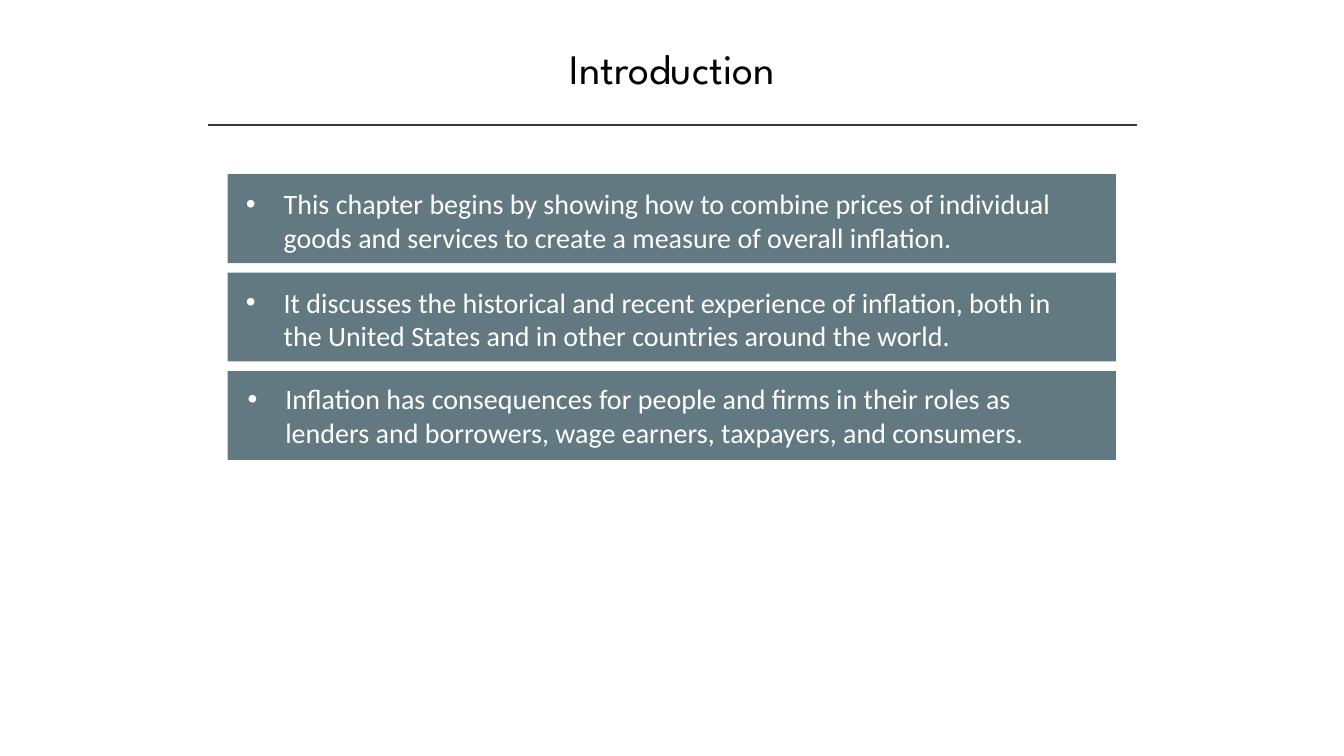
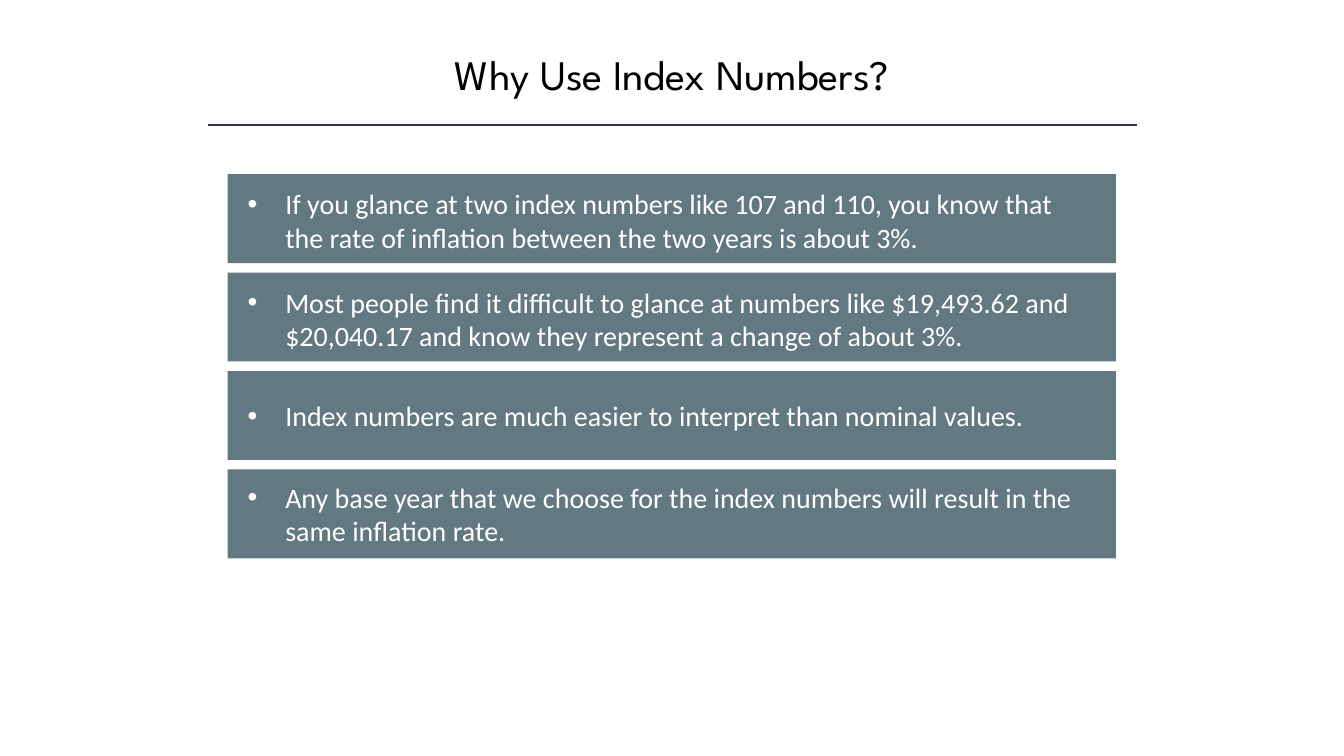
"""Build two slides on inflation, each a title, a rule and a stack of bullet bars."""
from lxml.etree import SubElement
from pptx import Presentation
from pptx.dml.color import RGBColor
from pptx.enum.shapes import MSO_CONNECTOR, MSO_SHAPE
from pptx.enum.text import MSO_ANCHOR, PP_ALIGN
from pptx.oxml.ns import qn
from pptx.util import Cm, Pt

COLORS = {"title": "000000", "rule": "323542", "bar": "627981", "text": "FFFFFF"}
FONTS = {
    "title": {"name": "League Spartan", "size": Pt(30), "bold": False},
    "text": {"name": "Calibri", "size": Pt(20)},
}
LEFT, TOP, WIDTH, HEIGHT, PITCH = 5.74, 4.39, 22.38, 2.24, 2.48
INDENT = Cm(0.95)

SLIDES = [
    ("Introduction", 0.94, [
        (0.46, "This chapter begins by showing how to combine prices of individual "
               "goods and services to create a measure of overall inflation."),
        (0.46, "It discusses the historical and recent experience of inflation, both in "
               "the United States and in other countries around the world."),
        (0.5, "Inflation has consequences for people and firms in their roles as "
              "lenders and borrowers, wage earners, taxpayers, and consumers."),
    ]),
    ("Why Use Index Numbers?", 1.09, [
        (0.5, "If you glance at two index numbers like 107 and 110, you know that "
              "the rate of inflation between the two years is about 3%."),
        (0.5, "Most people find it difficult to glance at numbers like $19,493.62 and "
              "$20,040.17 and know they represent a change of about 3%."),
        (0.5, "Index numbers are much easier to interpret than nominal values."),
        (0.5, "Any base year that we choose for the index numbers will result in the "
              "same inflation rate."),
    ]),
]


def color(role):
    """Return the colour of a role."""
    return RGBColor.from_string(COLORS[role])


def style(par, role, align):
    """Give a paragraph the font, colour and alignment of a role."""
    par.alignment = align
    for key, value in FONTS[role].items():
        setattr(par.font, key, value)
    par.font.color.rgb = color(role)


deck = Presentation()
deck.slide_width, deck.slide_height = Cm(33.87), Cm(19.05)

for heading, head_top, points in SLIDES:
    slide = deck.slides.add_slide(deck.slide_layouts[5])
    title = slide.shapes.title
    title.left, title.top, title.width, title.height = (
        Cm(4.24), Cm(head_top), Cm(25.4), Cm(1.55))
    title.text_frame.text = heading
    style(title.text_frame.paragraphs[0], "title", PP_ALIGN.CENTER)

    rule = slide.shapes.add_connector(
        MSO_CONNECTOR.STRAIGHT, Cm(5.23), Cm(3.15), Cm(28.65), Cm(3.15))
    rule.line.color.rgb = color("rule")
    rule.line.width = Pt(1)
    SubElement(rule._element.spPr, qn("a:effectLst"))

    for row, (inset, text) in enumerate(points):
        bar = slide.shapes.add_shape(
            MSO_SHAPE.RECTANGLE, Cm(LEFT), Cm(TOP + row * PITCH), Cm(WIDTH), Cm(HEIGHT))
        bar.shadow.inherit = False
        bar.fill.solid()
        bar.fill.fore_color.rgb = color("bar")
        bar.line.fill.background()

        frame = bar.text_frame
        layout = {
            "word_wrap": True,
            "vertical_anchor": MSO_ANCHOR.MIDDLE,
            "margin_left": Cm(inset),
            "margin_right": Cm(0.7),
            "margin_top": Cm(0.08 if row < 2 else 0),
            "margin_bottom": 0,
        }
        for key, value in layout.items():
            setattr(frame, key, value)
        frame.text = text
        par = frame.paragraphs[0]
        style(par, "text", PP_ALIGN.LEFT)
        props = par._p.get_or_add_pPr()
        props.set("marL", str(INDENT))
        props.set("indent", str(-INDENT))
        bullet = {"buFont": ("typeface", "Arial"), "buChar": ("char", "•")}
        for place, (tag, (key, value)) in enumerate(bullet.items()):
            mark = props.makeelement(qn(f"a:{tag}"), {key: value})
            props.insert(place, mark)

deck.save("out.pptx")
